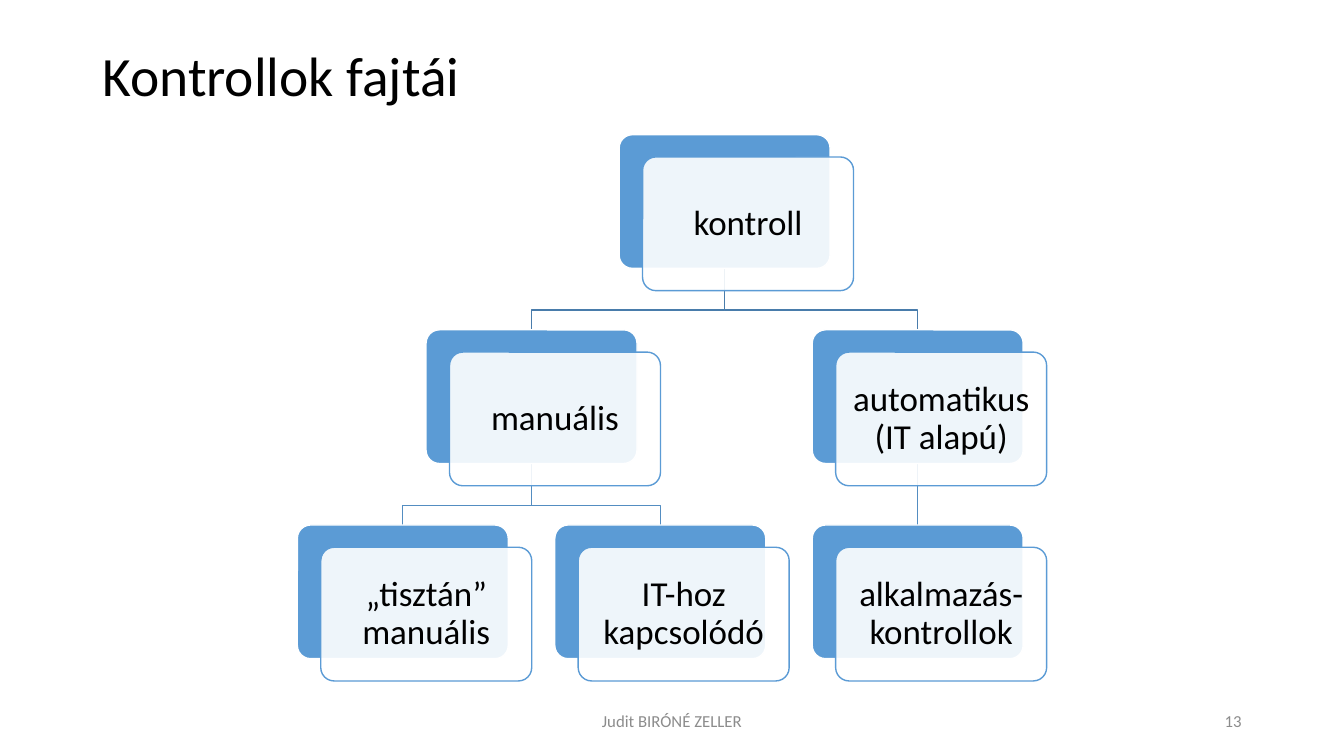
import pptx
import pptx.util
import pptx.dml.color
import pptx.enum.dml
import pptx.enum.shapes
import pptx.enum.text
import pptx.oxml
import pptx.oxml.ns

Pt = pptx.util.Pt
RGB = pptx.dml.color.RGBColor.from_string
SHAPE = pptx.enum.shapes.MSO_SHAPE
ALIGN = pptx.enum.text.PP_ALIGN

# Content: each card is (text, child cards)
TITLE = "Kontrollok fajtái"
TREE = ("kontroll", [
    ("manuális", [("„tisztán” manuális", []), ("IT-hoz kapcsolódó", [])]),
    ("automatikus (IT alapú)", [("alkalmazás-kontrollok", [])]),
])
FOOTERS = [
    ("Judit BIRÓNÉ ZELLER", 318, 324, ALIGN.CENTER),
    ("13", 678, 216, ALIGN.RIGHT),
]

THEME = {
    "font": "Calibri", "text": "000000", "muted": "8C8C8C",
    "card": "5B9BD5", "paper": "FFFFFF", "branches": ["497CAB", "538DC1"],
    "title_size": 39.6, "card_size": 25, "footer_size": 12,
    "line_width": 1, "opacity": 90000, "corner": 0.1,
}

# Layout in points
LEFT, TOP = 212.4, 96.2
COLUMN_STEP, ROW_STEP = 183.9, 139.4
CARD_WIDTH, CARD_HEIGHT = 150.7, 95.5
SHIFT_X, SHIFT_Y = 16.75, 15.9
GAP = ROW_STEP - CARD_HEIGHT
BEND = GAP * 0.68


def set_format(target, values):
    for name, value in values.items():
        setattr(target, name, value)


def write(frame, text, size, color, align, spacing=1.0, inset=None):
    set_format(frame, {
        "text": text, "word_wrap": True,
        "auto_size": pptx.enum.text.MSO_AUTO_SIZE.NONE,
        "vertical_anchor": pptx.enum.text.MSO_ANCHOR.MIDDLE,
    })
    if inset is not None:
        sides = ("left", "right", "top", "bottom")
        set_format(frame, {f"margin_{side}": Pt(inset) for side in sides})
    para = frame.paragraphs[0]
    set_format(para, {"alignment": align, "line_spacing": spacing})
    set_format(para.font, {"name": THEME["font"], "size": Pt(size)})
    para.font.color.rgb = RGB(color)


def set_line(shape, color):
    shape.line.color.rgb = RGB(color)
    shape.line.width = Pt(THEME["line_width"])


def place_cards(card, level=0, next_column=0):
    """Put leaves in successive columns and centre each parent above its children."""
    text, children = card
    nodes = []
    for child in children:
        nodes.append(place_cards(child, level + 1, next_column))
        next_column = nodes[-1]["next_column"]
    if nodes:
        left = (nodes[0]["left"] + nodes[-1]["left"]) / 2
    else:
        left = LEFT + next_column * COLUMN_STEP
        next_column += 1
    return {"text": text, "level": level, "left": left, "top": TOP + level * ROW_STEP,
            "children": nodes, "next_column": next_column}


def walk(node):
    yield node
    for child in node["children"]:
        yield from walk(child)


def add_branch(shapes, parent, child):
    start_x, end_x = (node["left"] + CARD_WIDTH / 2 for node in (parent, child))
    start_y, end_y = parent["top"] + CARD_HEIGHT, child["top"]
    if start_x == end_x:
        branch = shapes.add_connector(pptx.enum.shapes.MSO_CONNECTOR.STRAIGHT,
                                      Pt(start_x), Pt(start_y), Pt(end_x), Pt(end_y))
        properties = branch._element.spPr
        properties.append(pptx.oxml.parse_xml(
            f'<a:effectLst {pptx.oxml.ns.nsdecls("a")}/>'))
    else:
        bend_y = start_y + BEND
        builder = shapes.build_freeform(Pt(start_x), Pt(start_y))
        points = [(start_x, bend_y), (end_x, bend_y), (end_x, end_y)]
        builder.add_line_segments([(Pt(x), Pt(y)) for x, y in points], close=False)
        branch = builder.convert_to_shape()
        branch.fill.background()
        branch.shadow.inherit = False
    set_line(branch, THEME["branches"][parent["level"]])
    return branch


def add_panel(shapes, left, top, fill, line):
    panel = shapes.add_shape(SHAPE.ROUNDED_RECTANGLE, Pt(left), Pt(top),
                             Pt(CARD_WIDTH), Pt(CARD_HEIGHT))
    panel.adjustments[0] = THEME["corner"]
    panel.shadow.inherit = False
    panel.fill.solid()
    panel.fill.fore_color.rgb = RGB(fill)
    set_line(panel, line)
    return panel


def add_card(shapes, node):
    node["back"] = add_panel(shapes, node["left"], node["top"], THEME["card"], THEME["paper"])
    front = add_panel(shapes, node["left"] + SHIFT_X, node["top"] + SHIFT_Y,
                      THEME["paper"], THEME["card"])
    color = front._element.spPr.find(".//" + pptx.oxml.ns.qn("a:srgbClr"))
    color.append(pptx.oxml.parse_xml(
        f'<a:alpha {pptx.oxml.ns.nsdecls("a")} val="{THEME["opacity"]}"/>'))
    write(front.text_frame, node["text"], THEME["card_size"], THEME["text"],
          ALIGN.CENTER, 0.9, 7.3)


def main():
    deck = pptx.Presentation()
    set_format(deck, {"slide_width": Pt(960), "slide_height": Pt(540)})
    page = deck.slides.add_slide(deck.slide_layouts[5])

    # Title
    title = page.shapes.title
    set_format(title, {"left": Pt(66), "top": Pt(28.8), "width": Pt(828), "height": Pt(54)})
    write(title.text_frame, TITLE, THEME["title_size"], THEME["text"], ALIGN.LEFT, 0.9)

    # Branches behind the cards
    root = place_cards(TREE)
    branches = [(add_branch(page.shapes, parent, child), parent, child)
                for parent in walk(root) for child in parent["children"]]

    # Cards
    for node in walk(root):
        add_card(page.shapes, node)

    # Join the straight branches to their cards
    for branch, parent, child in branches:
        if parent["left"] == child["left"]:
            branch.begin_connect(parent["back"], 2)
            branch.end_connect(child["back"], 0)

    # Footer
    for text, left, width, align in FOOTERS:
        box = page.shapes.add_textbox(Pt(left), Pt(500.5), Pt(width), Pt(28.75))
        write(box.text_frame, text, THEME["footer_size"], THEME["muted"], align)

    deck.save("out.pptx")


if __name__ == "__main__":
    main()
